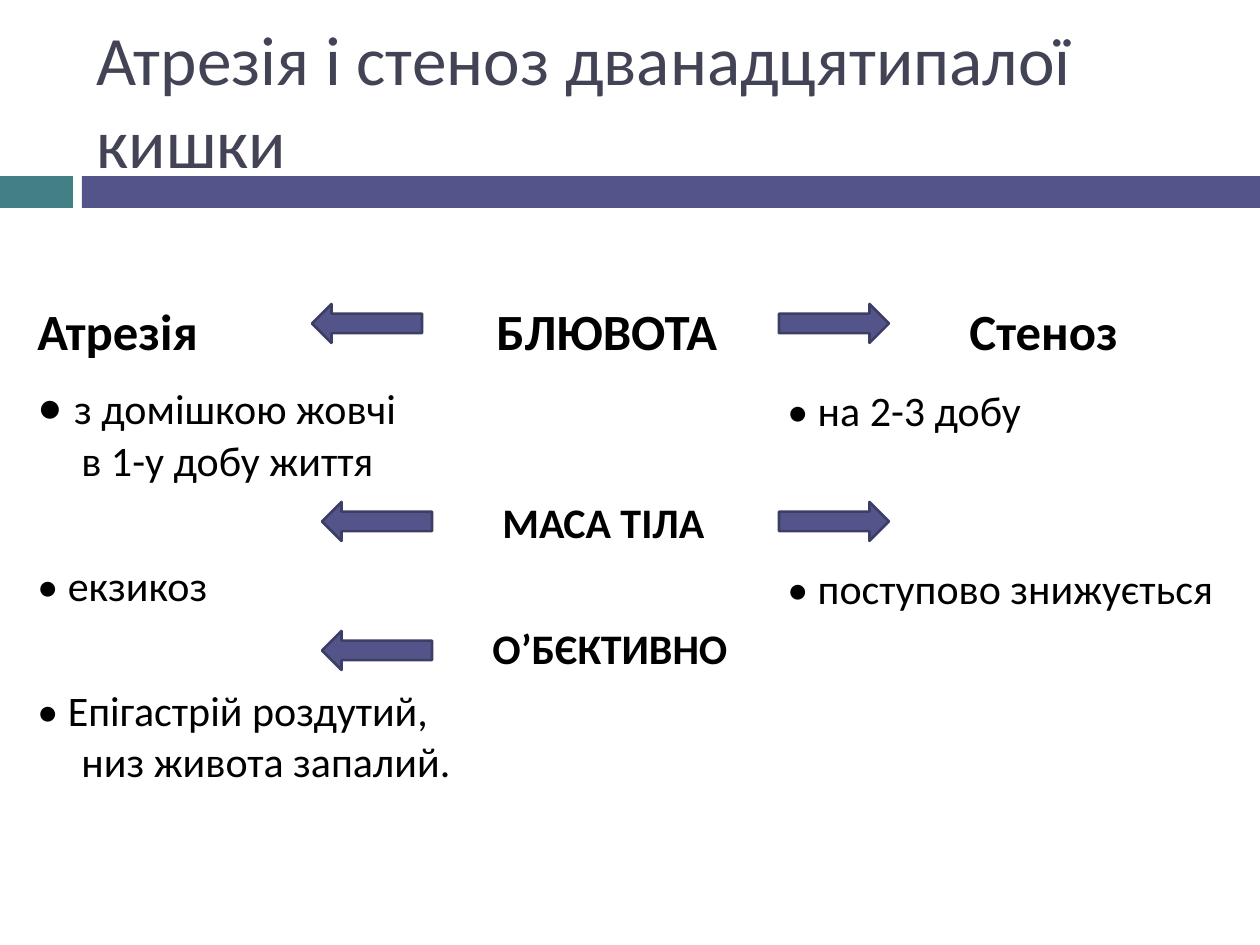
from pptx import Presentation
from pptx import util as u
from pptx.dml.color import RGBColor
from pptx.enum import shapes, text

PX = 914400 // 126
FONT = "Calibri"
HEX = {"teal": "438086", "violet": "53548A", "edge": "3D3E66",
       "title": "424456", "ink": "000000"}


def px(n):
    return u.Emu(n * PX)


def color(name):
    return RGBColor.from_string(HEX[name])


def add_run(par, words, size, ink, bold=False):
    run = par.add_run()
    run.text = words
    font = run.font
    font.name, font.size, font.bold = FONT, u.Pt(size), bold
    font.color.rgb = color(ink)


def add_block(slide, kind, x, y, w, h, fill, edge=None):
    block = slide.shapes.add_shape(kind, px(x), px(y), px(w), px(h))
    block.shadow.inherit = False
    block.fill.solid()
    block.fill.fore_color.rgb = color(fill)
    if edge:
        block.line.color.rgb = color(edge)
        block.line.width = u.Pt(1.5)
    else:
        block.line.fill.background()


def add_title(slide, words):
    title = slide.shapes.title
    title.left, title.top, title.width, title.height = map(px, (84, 31, 1124, 136))
    frame = title.text_frame
    frame.word_wrap = True
    frame.auto_size = text.MSO_AUTO_SIZE.NONE
    frame.vertical_anchor = text.MSO_ANCHOR.MIDDLE
    par = frame.paragraphs[0]
    par.alignment = text.PP_ALIGN.LEFT
    add_run(par, words, 39.6, "title")


def add_box(slide, x, y, w, h):
    box = slide.shapes.add_textbox(px(x), px(y), px(w), px(h))
    box.text_frame.word_wrap = True
    return box.text_frame


def add_par(frame, runs, left=0, gap=7):
    """Add a paragraph of (words, size, bold) runs, indented by left px."""
    par = frame.paragraphs[0]
    if par.runs:
        par = frame.add_paragraph()
    par.alignment = text.PP_ALIGN.LEFT
    par.space_before = u.Pt(gap)
    props = par._p.get_or_add_pPr()
    props.set("marL", str(px(left)))
    props.set("indent", "0")
    for words, size, bold in runs:
        add_run(par, words, size, "ink", bold)


def add_body(slide):
    """Left column, with the middle headings between its entries."""
    frame = add_box(slide, 25, 294, 1221, 622)
    hang = 44
    add_par(frame, [("Атрезія", 29, True)])
    add_par(frame, [("• ", 29, False), ("з домішкою жовчі", 24, False)])
    add_par(frame, [("в 1-у добу життя", 24, False)], left=hang, gap=0)
    add_par(frame, [("МАСА ТІЛА", 24, True)], left=465)
    add_par(frame, [("• екзикоз", 24, False)])
    add_par(frame, [("О’БЄКТИВНО", 24, True)], left=455)
    add_par(frame, [("• Епігастрій роздутий,", 24, False)])
    add_par(frame, [("низ живота запалий.", 24, False)], left=hang, gap=0)


def main():
    deck = Presentation()
    deck.slide_width, deck.slide_height = px(1260), px(945)
    slide = deck.slides.add_slide(deck.slide_layouts[5])
    kind = shapes.MSO_SHAPE

    # Band under the title
    add_block(slide, kind.RECTANGLE, 0, 176, 73, 32, "teal")
    add_block(slide, kind.RECTANGLE, 82, 176, 1178, 32, "violet")

    add_title(slide, "Атрезія і стеноз дванадцятипалої кишки")
    add_body(slide)

    # Column heads and right column
    for x, y, w, h, words, size, bold in (
            (484, 294, 270, 75, "БЛЮВОТА", 29, True),
            (957, 294, 270, 75, "Стеноз", 29, True),
            (775, 378, 470, 64, "• на 2-3 добу", 24, False),
            (775, 556, 470, 64, "• поступово знижується", 24, False)):
        add_par(add_box(slide, x, y, w, h), [(words, size, bold)])

    # Arrows from each heading to its columns
    for x, y in ((312, 304), (322, 502), (322, 631)):
        add_block(slide, kind.LEFT_ARROW, x, y, 110, 39, "violet", "edge")
    for y in (304, 502):
        add_block(slide, kind.RIGHT_ARROW, 779, y, 110, 39, "violet", "edge")

    deck.save("out.pptx")


if __name__ == "__main__":
    main()
